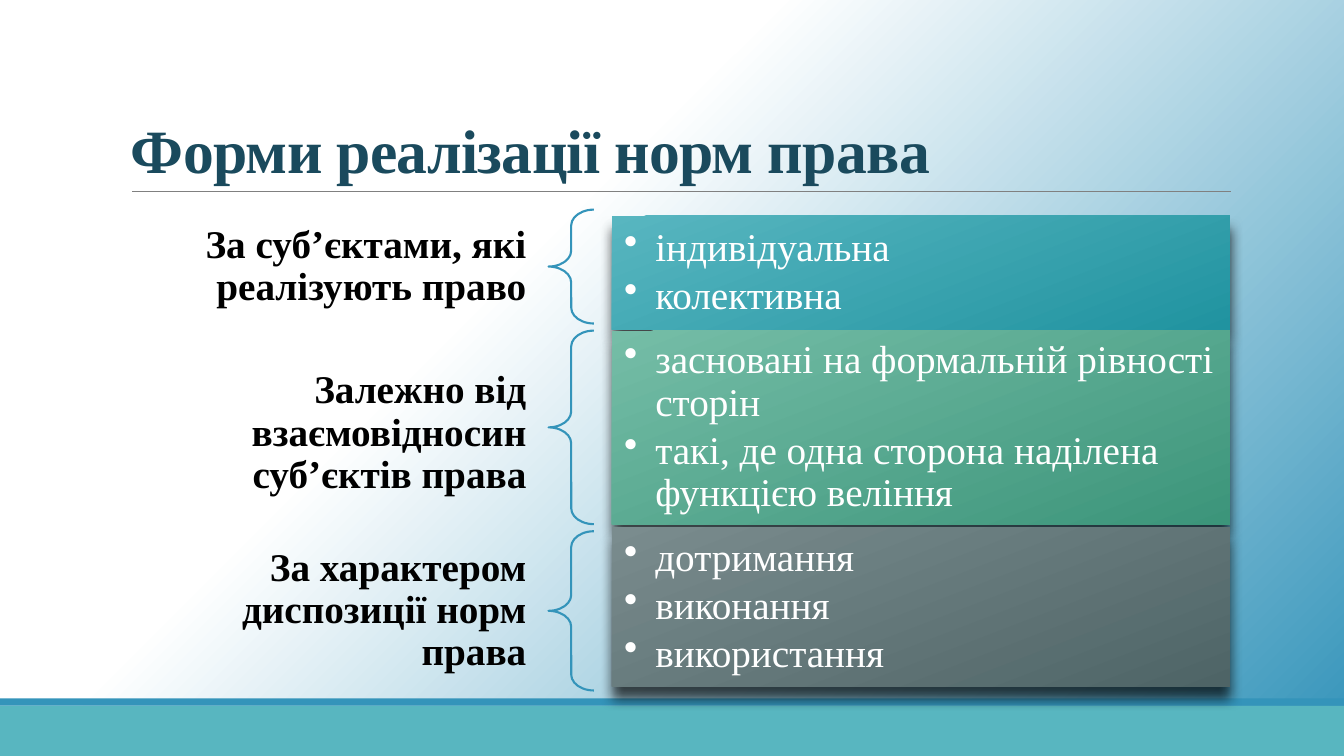
from lxml.etree import SubElement
from pptx import Presentation
from pptx.dml.color import RGBColor
from pptx.enum.shapes import MSO_CONNECTOR as CONN, MSO_SHAPE as SHAPE
from pptx.enum.text import MSO_ANCHOR as ANCHOR, PP_ALIGN as ALIGN
from pptx.oxml.ns import qn
from pptx.util import Inches, Pt

FONT = "Times New Roman"
BLUE, TEAL = "3494BA", "58B6C0"
TITLE = dict(size=Pt(44), name=FONT, bold=True)
LABEL = dict(size=Pt(28), name=FONT, bold=True)
ITEM = dict(size=Pt(28), name=FONT, bold=False)

# label, label top and height, brace top, box top, row height, gradient, items
ROWS = [
    ("За суб’єктами, які реалізують право", 2.16, 0.97, 2.08, 2.14, 1.13,
     (TEAL, "2093A0"), ["індивідуальна", "колективна"]),
    ("Залежно від взаємовідносин суб’єктів права", 3.62, 1.36, 3.28, 3.28, 1.92,
     ("75BDA7", "3C957A"),
     ["засновані на формальній рівності сторін",
      "такі, де одна сторона наділена функцією веління"]),
    ("За характером диспозиції норм права", 5.38, 1.36, 5.27, 5.23, 1.58,
     ("7A8C8E", "4E6466"), ["дотримання", "виконання", "використання"]),
]


def rgb(color):
    return RGBColor.from_string(color)


def set_gradient(fill, colors, angle, start=0):
    fill.gradient()
    fill.gradient_angle = 360 - angle
    for stop, color, position in zip(fill.gradient_stops, colors, (start, 1)):
        stop.color.rgb = rgb(color)
        stop.position = position


def add_preset(slide, kind, x, y, w, h, fill=None):
    sp = slide.shapes.add_shape(kind, *map(Inches, (x, y, w, h)))
    sp.shadow.inherit = False
    sp.line.fill.background()
    if fill:
        sp.fill.solid()
        sp.fill.fore_color.rgb = rgb(fill)
    else:
        sp.fill.background()
    return sp


def set_frame(sp, anchor, inset_x, inset_y):
    tf = sp.text_frame
    frame = dict(word_wrap=True, vertical_anchor=anchor,
                 margin_left=Inches(inset_x), margin_right=Inches(inset_x),
                 margin_top=Inches(inset_y), margin_bottom=Inches(inset_y))
    for key, value in frame.items():
        setattr(tf, key, value)
    return tf


def write(p, text, fmt, color, align, spacing):
    p.alignment, p.line_spacing = align, spacing
    r = p.add_run()
    r.text = text
    for key, value in fmt.items():
        setattr(r.font, key, value)
    r.font.color.rgb = rgb(color)
    return r


def add_text(slide, x, y, w, h, text, fmt, color, anchor, align, spacing, insets):
    sp = slide.shapes.add_textbox(*map(Inches, (x, y, w, h)))
    tf = set_frame(sp, anchor, *insets)
    return write(tf.paragraphs[0], text, fmt, color, align, spacing)


def add_rule(slide, x1, x2, y):
    line = slide.shapes.add_connector(CONN.STRAIGHT, *map(Inches, (x1, y, x2, y)))
    line.line.color.rgb = rgb("808080")
    line.line.width = Pt(0.5)
    SubElement(line._element.spPr, qn("a:effectLst"))


def add_brace(slide, y, h):
    sp = add_preset(slide, SHAPE.LEFT_BRACE, 5.44, y, 0.45, h)
    sp.adjustments[0], sp.adjustments[1] = 0.35, 0.5
    sp.line.color.rgb = rgb(BLUE)
    sp.line.width = Pt(1.5)


def add_shadow(sp):
    effects = sp._element.spPr.find(qn("a:effectLst"))
    shadow = SubElement(effects, qn("a:outerShdw"), blurRad=str(Pt(9)),
                        dist=str(Pt(9)), dir="5400000", algn="ctr",
                        rotWithShape="0")
    color = SubElement(shadow, qn("a:srgbClr"), val="000000")
    SubElement(color, qn("a:alpha"), val="70000")


def add_item_box(slide, y, h, colors, items):
    sp = add_preset(slide, SHAPE.RECTANGLE, 6.07, y, 6.13, h)
    set_gradient(sp.fill, colors, 69)
    add_shadow(sp)
    tf = set_frame(sp, ANCHOR.MIDDLE, 0.12, 0.12)
    for i, item in enumerate(items):
        p = tf.add_paragraph() if i else tf.paragraphs[0]
        write(p, item, ITEM, "FFFFFF", ALIGN.LEFT, 0.9)
        p.level = 1
        p.space_after = Pt(4.2)
        pPr = p._p.get_or_add_pPr()
        pPr.set("marL", str(Inches(0.31)))
        pPr.set("indent", str(-Inches(0.31)))
        SubElement(pPr, qn("a:buChar"), char="•")


def main():
    prs = Presentation()
    prs.slide_width, prs.slide_height = Inches(13.33), Inches(7.5)
    slide = prs.slides.add_slide(prs.slide_layouts[6])

    # Background, footer bars and title rule
    set_gradient(slide.background.fill, ("FFFFFF", BLUE), 45, start=0.37)
    add_preset(slide, SHAPE.RECTANGLE, 0, 7, 13.33, 0.5, TEAL)
    add_preset(slide, SHAPE.RECTANGLE, 0, 6.93, 13.33, 0.07, BLUE)
    add_rule(slide, 1.31, 12.21, 1.9)

    # Title
    r = add_text(slide, 1.2, 0.31, 11, 1.59, "Форми реалізації норм права",
                 TITLE, "1A4A5D", ANCHOR.BOTTOM, ALIGN.LEFT, 0.85, (0.1, 0.05))
    r._r.get_or_add_rPr().set("spc", "-50")

    # Classification rows
    for label, label_y, label_h, brace_y, box_y, h, colors, items in ROWS:
        add_text(slide, 1.43, label_y, 4.01, label_h, label, LABEL, "000000",
                 ANCHOR.MIDDLE, ALIGN.RIGHT, 0.9, (0.22, 0.08))
        add_brace(slide, brace_y, h)
        add_item_box(slide, box_y, h, colors, items)

    prs.save("out.pptx")


if __name__ == "__main__":
    main()
